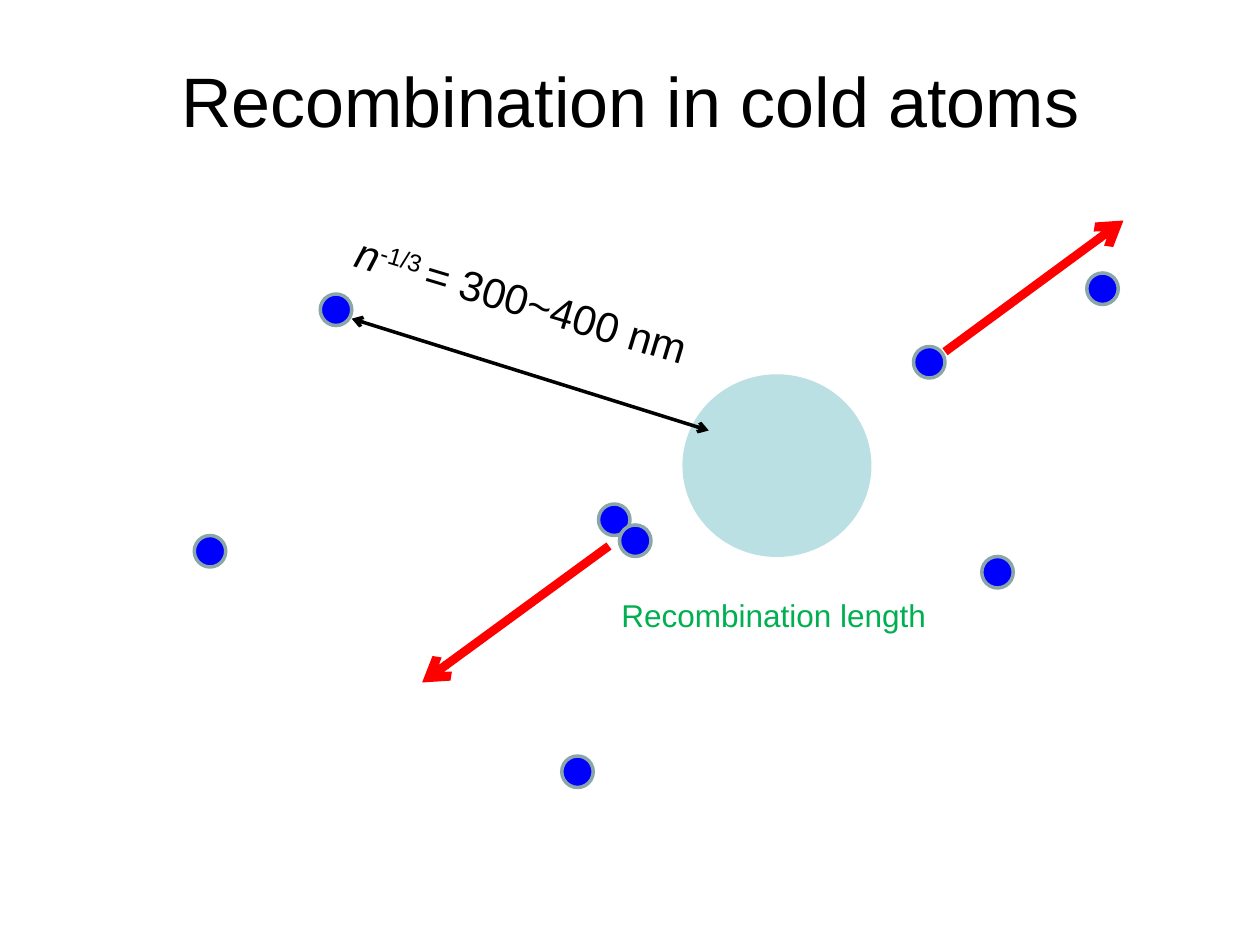
from pptx import Presentation
from pptx.dml.color import RGBColor
from pptx.enum.shapes import MSO_CONNECTOR, MSO_SHAPE
from pptx.enum.text import MSO_ANCHOR, PP_ALIGN
from pptx.oxml.ns import qn
from pptx.util import Inches, Pt
from lxml import etree

OVAL = MSO_SHAPE.OVAL
STRAIGHT = MSO_CONNECTOR.STRAIGHT
LEFT, CENTER = PP_ALIGN.LEFT, PP_ALIGN.CENTER
TOP, MIDDLE = MSO_ANCHOR.TOP, MSO_ANCHOR.MIDDLE

BLACK = RGBColor(0x00, 0x00, 0x00)
RED = RGBColor(0xFF, 0x00, 0x00)
GREEN = RGBColor(0x00, 0xB0, 0x50)
BLUE = RGBColor(0x00, 0x00, 0xFF)
GREY = RGBColor(0x8A, 0xA6, 0xA8)
PALE = RGBColor(0xBB, 0xE0, 0xE3)

COLS, ROWS = 240, 180
CELL = Inches(10) / COLS
ATOM = 6

FREE_ATOMS = [(1, 60), (151, 64), (71, 102), (171, 10), (25, 14)]
RECOMBINING_ATOMS = [(78, 54), (82, 58), (138, 24)]
RECOILS = [((80, 62), (44.4, 88)), ((144, 25), (178, 0))]


def cells(*values):
    """Turn grid cells into slide lengths."""
    return [round(v * CELL) for v in values]


def add_text(slide, box, runs, size, color=BLACK, align=LEFT, anchor=TOP,
             wrap=False, rotation=0):
    """Add a text box; each run is (text, italic, baseline in percent)."""
    tb = slide.shapes.add_textbox(*cells(*box))
    tb.rotation = rotation
    tf = tb.text_frame
    tf.word_wrap = wrap
    tf.vertical_anchor = anchor
    p = tf.paragraphs[0]
    p.alignment = align
    for text, italic, baseline in runs:
        r = p.add_run()
        r.text = text
        r.font.name = "Arial"
        r.font.size = Pt(size)
        r.font.italic = italic
        r.font.color.rgb = color
        if baseline:
            r._r.get_or_add_rPr().set("baseline", str(baseline * 1000))


def add_circle(slide, box, fill, outline=None):
    s = slide.shapes.add_shape(OVAL, *cells(*box))
    s.shadow.inherit = False
    s.fill.solid()
    s.fill.fore_color.rgb = fill
    if outline is None:
        s.line.fill.background()
    else:
        s.line.color.rgb = outline
        s.line.width = Pt(2)


def add_arrow(slide, start, end, color, width, ends=("tailEnd",)):
    c = slide.shapes.add_connector(STRAIGHT, *cells(*start, *end))
    c.line.color.rgb = color
    c.line.width = Pt(width)
    ln = c.line._get_or_add_ln()
    for tag in ends:
        etree.SubElement(ln, qn(f"a:{tag}"), type="arrow")
    etree.SubElement(c._element.spPr, qn("a:effectLst"))


def add_title(slide, box):
    add_text(slide, box, [("Recombination in cold atoms", False, 0)], 40,
             align=CENTER, anchor=MIDDLE, wrap=True)


def add_atom_diagram(slide, left, top):
    def at(x, y, *size):
        return (left + x, top + y, *size)

    def add_atoms(corners):
        for x, y in corners:
            add_circle(slide, at(x, y, ATOM, ATOM), BLUE, GREY)

    add_circle(slide, at(94, 29.3, 36, 34.8), PALE)
    add_atoms(FREE_ATOMS)
    add_arrow(slide, at(31, 18.7), at(99, 40), BLACK, 2,
              ends=("headEnd", "tailEnd"))
    add_text(slide, at(28.3, 9.4, 72.2, 12),
             [("n", True, 0), ("-1/3 ", False, 30), ("= 300~400 nm", False, 0)],
             24, rotation=16.7)
    add_text(slide, at(80, 70.3, 63.4, 9.6),
             [("Recombination length", False, 0)], 18, GREEN)
    add_atoms(RECOMBINING_ATOMS)
    for start, end in RECOILS:
        add_arrow(slide, at(*start), at(*end), RED, 5)


def main():
    prs = Presentation()
    prs.slide_width, prs.slide_height = cells(COLS, ROWS)
    slide = prs.slides.add_slide(prs.slide_layouts[6])
    add_title(slide, (12, 4, 216, 30))
    add_atom_diagram(slide, 36, 42)
    prs.save("out.pptx")


if __name__ == "__main__":
    main()
